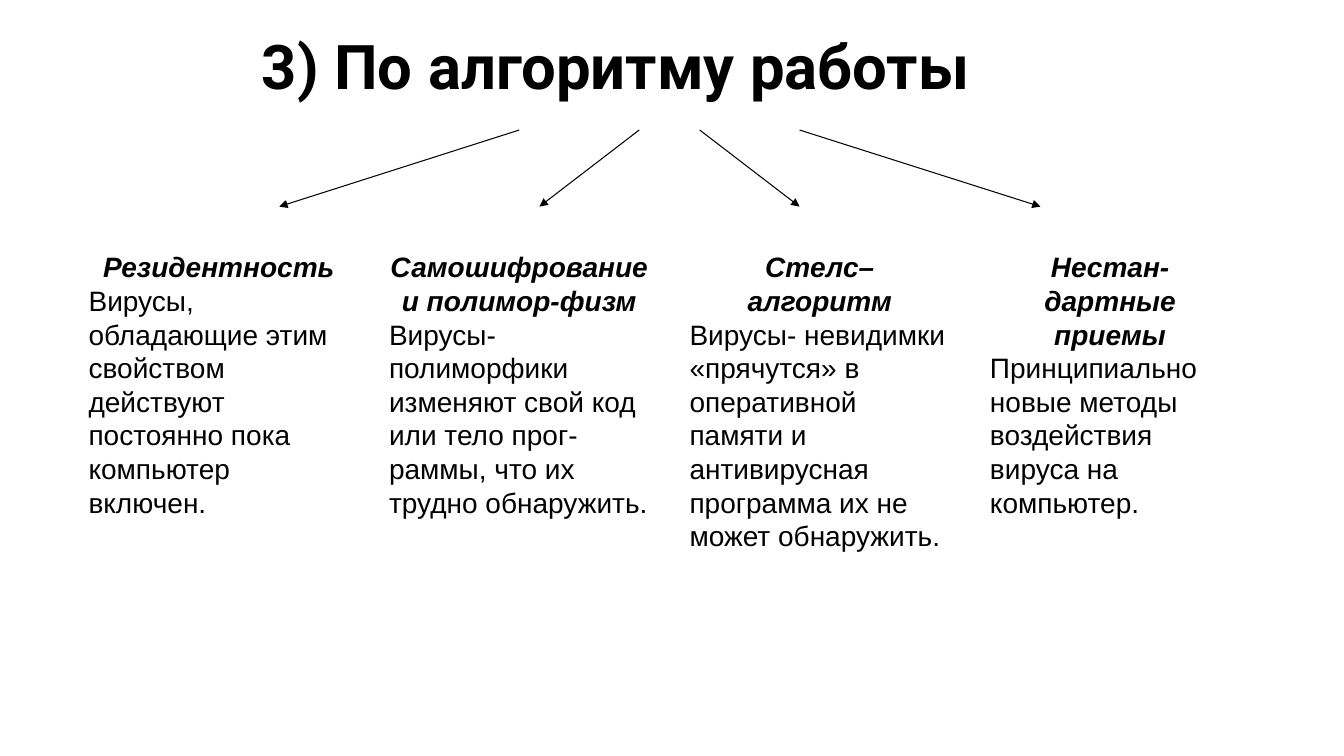
from dataclasses import dataclass

import pptx
import pptx.dml.color
import pptx.enum.shapes
import pptx.enum.text
import pptx.oxml.ns
import pptx.util
from lxml import etree
from pptx.util import Inches


@dataclass(frozen=True)
class Theme:
    ink: str = "000000"
    title_font: str = "Roboto"
    body_font: str = "Arial"
    title_size: int = 44
    body_size: int = 20
    line_width: float = 0.75


THEME = Theme()
ALIGN = pptx.enum.text.PP_ALIGN

# Heading, description, box width
COLUMNS = [
    ("Резидентность",
     "Вирусы, обладающие этим свойством действуют постоянно пока компьютер включен.", 2.78),
    ("Самошифрование и полимор-физм",
     "Вирусы-полиморфики изменяют свой код или тело прог-раммы, что их трудно обнаружить.", 2.78),
    ("Стелс– алгоритм",
     "Вирусы- невидимки «прячутся» в оперативной памяти и антивирусная программа "
     "их не может обнаружить.", 2.78),
    ("Нестан-дартные приемы",
     "Принципиально новые методы воздействия вируса на компьютер.", 2.58),
]
COLUMN_LEFT, COLUMN_STEP = 0.78, 2.98

# Start and end x of each arrow
ARROWS = [(5.15, 2.77), (6.34, 5.35), (6.94, 7.93), (7.93, 10.32)]
ARROW_TOP, ARROW_BOTTOM = 1.29, 2.05


def ink():
    return pptx.dml.color.RGBColor.from_string(THEME.ink)


def style(p, text, font, size, bold=False, italic=False, align=ALIGN.LEFT):
    p.text = text
    p.alignment = align
    p.font.name = font
    p.font.size = pptx.util.Pt(size)
    p.font.bold = bold
    p.font.italic = italic
    p.font.color.rgb = ink()


def add_text_frame(s, left, top, width, height):
    box = s.shapes.add_textbox(Inches(left), Inches(top), Inches(width), Inches(height))
    box.text_frame.word_wrap = True
    return box.text_frame


def add_title(s, text):
    tf = add_text_frame(s, 2.5, -0.06, 9, 1.5)
    tf.vertical_anchor = pptx.enum.text.MSO_ANCHOR.MIDDLE
    p = tf.paragraphs[0]
    style(p, text, THEME.title_font, THEME.title_size, bold=True)
    p.line_spacing = 0.9


def add_arrow(s, x1, x2):
    line = s.shapes.add_connector(
        pptx.enum.shapes.MSO_CONNECTOR.STRAIGHT,
        Inches(x1), Inches(ARROW_TOP), Inches(x2), Inches(ARROW_BOTTOM))
    line.line.color.rgb = ink()
    line.line.width = pptx.util.Pt(THEME.line_width)
    # Arrowhead at the end, no shadow
    qn = pptx.oxml.ns.qn
    etree.SubElement(line.line._get_or_add_ln(), qn("a:tailEnd"), type="triangle")
    etree.SubElement(line._element.spPr, qn("a:effectLst"))


def add_column(s, left, heading, description, width):
    tf = add_text_frame(s, left, 2.43, width, 4.59)
    style(tf.paragraphs[0], heading, THEME.body_font, THEME.body_size,
          bold=True, italic=True, align=ALIGN.CENTER)
    style(tf.add_paragraph(), description, THEME.body_font, THEME.body_size)


def main():
    prs = pptx.Presentation()
    prs.slide_width, prs.slide_height = Inches(13.33), Inches(7.5)
    s = prs.slides.add_slide(prs.slide_layouts[6])

    # Title
    add_title(s, "3) По алгоритму работы")

    # Arrows from the title to the columns
    for x1, x2 in ARROWS:
        add_arrow(s, x1, x2)

    # Columns
    for i, (heading, description, width) in enumerate(COLUMNS):
        add_column(s, COLUMN_LEFT + i * COLUMN_STEP, heading, description, width)

    prs.save("out.pptx")


if __name__ == "__main__":
    main()
